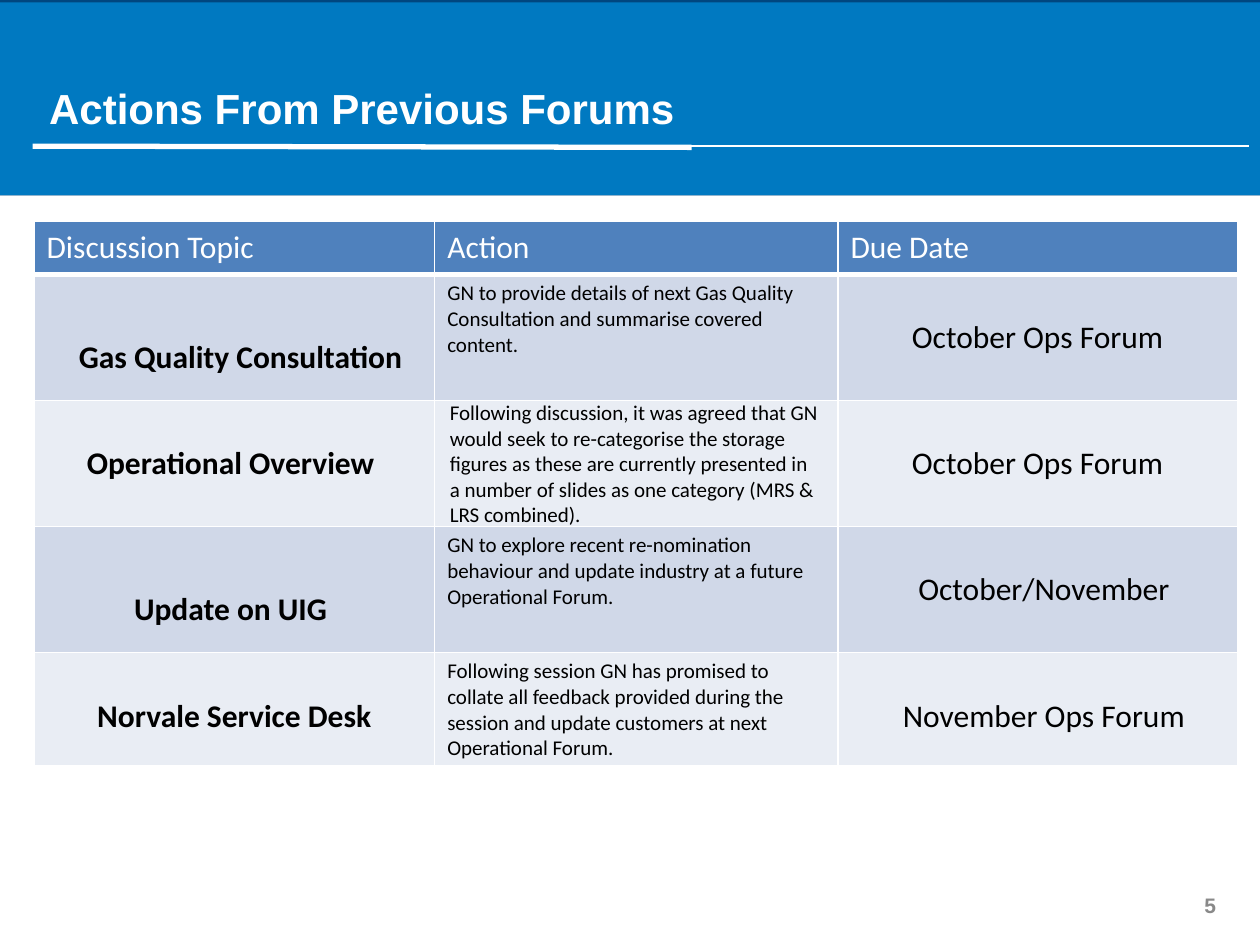
"""Build the slide that lists actions from previous forums."""
import pptx
import pptx.dml.color
import pptx.enum.shapes
import pptx.enum.text
import pptx.oxml
import pptx.oxml.ns
import pptx.util

Inches = pptx.util.Inches
Pt = pptx.util.Pt
RGBColor = pptx.dml.color.RGBColor
ALIGN = pptx.enum.text.PP_ALIGN
ANCHOR = pptx.enum.text.MSO_ANCHOR

WHITE = RGBColor(0xFF, 0xFF, 0xFF)
BLACK = RGBColor(0, 0, 0)
NAVY = RGBColor(0x00, 0x46, 0x7F)
BLUE = RGBColor(0x00, 0x79, 0xC1)
GREY = RGBColor(0x89, 0x89, 0x89)
HEADER_FILL = RGBColor(0x4F, 0x81, 0xBD)
BAND_FILLS = (RGBColor(0xD0, 0xD8, 0xE8), RGBColor(0xE9, 0xED, 0xF4))

HEADINGS = ("Discussion Topic", "Action", "Due Date")
ACTIONS = (
    ("Gas Quality Consultation",
     "GN to provide details of next Gas Quality Consultation and summarise covered content.",
     "October Ops Forum"),
    ("Operational Overview",
     "Following discussion, it was agreed that GN would seek to re-categorise the storage "
     "figures as these are currently presented in a number of slides as one category "
     "(MRS & LRS combined).",
     "October Ops Forum"),
    ("Update on UIG",
     "GN to explore recent re-nomination behaviour and update industry at a future "
     "Operational Forum.",
     "October/November"),
    ("Norvale Service Desk",
     "Following session GN has promised to collate all feedback provided during the "
     "session and update customers at next Operational Forum.",
     "November Ops Forum"),
)
COLUMN_WIDTHS = (3.18, 3.2, 3.17)
ROW_HEIGHTS = (0.42, 1, 1, 1, 0.9)
PLAIN_INSETS = (0.1, 0.05, 0.1, 0.05)
TOPIC_INSETS = ((0.2, 0.37, 0.1, 0.05), (0.1, 0.05, 0.16, 0.05),
                (0.1, 0.37, 0.16, 0.05), (0.1, 0.16, 0.1, 0.05))
ACTION_INSETS = (PLAIN_INSETS, (0.12, 0, 0.12, 0), PLAIN_INSETS, PLAIN_INSETS)
DATE_INSETS = (PLAIN_INSETS, PLAIN_INSETS, (0.2, 0.05, 0.1, 0.05), (0.2, 0.16, 0.1, 0.05))


def write(frame, text, font, size, color, bold=False, align=ALIGN.LEFT):
    """Write one formatted run into the first paragraph of a text frame."""
    para = frame.paragraphs[0]
    para.alignment = align
    para.space_before = Pt(0)
    span = para.add_run()
    span.text = text
    span.font.name = font
    span.font.size = Pt(size)
    span.font.bold = bold
    span.font.color.rgb = color


def add_band(page, top, height, color):
    """Add a full-width colour band."""
    band = page.shapes.add_shape(pptx.enum.shapes.MSO_SHAPE.RECTANGLE,
                                 0, Inches(top), Inches(10), Inches(height))
    band.shadow.inherit = False
    band.fill.solid()
    band.fill.fore_color.rgb = color
    band.line.fill.background()


def place_title(page, text):
    """Place the title placeholder in front of the bands."""
    title = page.shapes.title
    title.left, title.top = Inches(0.29), Inches(0.6)
    title.width, title.height = Inches(6.54), Inches(0.51)
    frame = title.text_frame
    frame.word_wrap = True
    frame.auto_size = pptx.enum.text.MSO_AUTO_SIZE.NONE
    frame.vertical_anchor = ANCHOR.MIDDLE
    write(frame, text, "Arial", 24, WHITE, True)
    page.shapes.element.append(title.element)


def add_rule(page, start, end, weight):
    """Add a white line under the title."""
    rule = page.shapes.add_connector(pptx.enum.shapes.MSO_CONNECTOR.STRAIGHT,
                                     *(Inches(value) for value in start + end))
    rule.line.color.rgb = WHITE
    rule.line.width = Pt(weight)
    properties = rule.element.find(pptx.oxml.ns.qn("p:spPr"))
    properties.append(pptx.oxml.parse_xml(
        f'<a:effectLst {pptx.oxml.ns.nsdecls("a")}/>'))


def add_page_number(page, number):
    """Add the slide number at the bottom right."""
    box = page.shapes.add_textbox(Inches(7.42), Inches(6.98), Inches(2.33), Inches(0.4))
    frame = box.text_frame
    frame.word_wrap = True
    frame.vertical_anchor = ANCHOR.MIDDLE
    write(frame, number, "Arial", 12, GREY, True, ALIGN.RIGHT)


def fill_cell(cell, text, insets, fill, size=18, color=BLACK, bold=False,
              align=ALIGN.LEFT, anchor=ANCHOR.TOP, bottom_weight=1):
    """Fill one table cell with text, insets, colour and white borders."""
    cell.margin_left, cell.margin_top, cell.margin_right, cell.margin_bottom = map(Inches, insets)
    cell.vertical_anchor = anchor
    write(cell.text_frame, text, "Calibri", size, color, bold, align)
    properties = cell._tc.get_or_add_tcPr()
    for side, weight in (("L", 1), ("R", 1), ("T", 1), ("B", bottom_weight)):
        properties.append(pptx.oxml.parse_xml(
            f'<a:ln{side} {pptx.oxml.ns.nsdecls("a")} w="{Pt(weight)}">'
            f'<a:solidFill><a:srgbClr val="{WHITE}"/></a:solidFill></a:ln{side}>'))
    cell.fill.solid()
    cell.fill.fore_color.rgb = fill


def add_actions_table(page):
    """Add the table of topics, actions and due dates."""
    table = page.shapes.add_table(
        len(ROW_HEIGHTS), len(COLUMN_WIDTHS), Inches(0.27), Inches(1.76),
        Inches(sum(COLUMN_WIDTHS)), Inches(sum(ROW_HEIGHTS))).table
    for column, width in zip(table.columns, COLUMN_WIDTHS):
        column.width = Inches(width)
    for row, height in zip(table.rows, ROW_HEIGHTS):
        row.height = Inches(height)
    for index, heading in enumerate(HEADINGS):
        fill_cell(table.cell(0, index), heading, PLAIN_INSETS, HEADER_FILL,
                  color=WHITE, bottom_weight=3)
    for index, (topic, action, date) in enumerate(ACTIONS):
        topic_cell, action_cell, date_cell = table.rows[index + 1].cells
        fill = BAND_FILLS[index % 2]
        fill_cell(topic_cell, topic, TOPIC_INSETS[index], fill, bold=True,
                  align=ALIGN.CENTER, anchor=ANCHOR.MIDDLE)
        fill_cell(action_cell, action, ACTION_INSETS[index], fill, size=12)
        fill_cell(date_cell, date, DATE_INSETS[index], fill,
                  align=ALIGN.CENTER, anchor=ANCHOR.MIDDLE)


def main():
    """Build and save the deck."""
    deck = pptx.Presentation()
    deck.slide_width, deck.slide_height = Inches(10), Inches(7.5)
    page = deck.slides.add_slide(deck.slide_layouts[5])
    add_band(page, 0, 1.55, NAVY)
    add_band(page, 0.02, 1.53, BLUE)
    place_title(page, "Actions From Previous Forums")
    add_rule(page, (0.27, 1.16), (9.91, 1.16), 0.75)
    add_rule(page, (0.26, 1.16), (5.49, 1.17), 3)
    add_page_number(page, "5")
    add_actions_table(page)
    deck.save("out.pptx")


if __name__ == "__main__":
    main()
